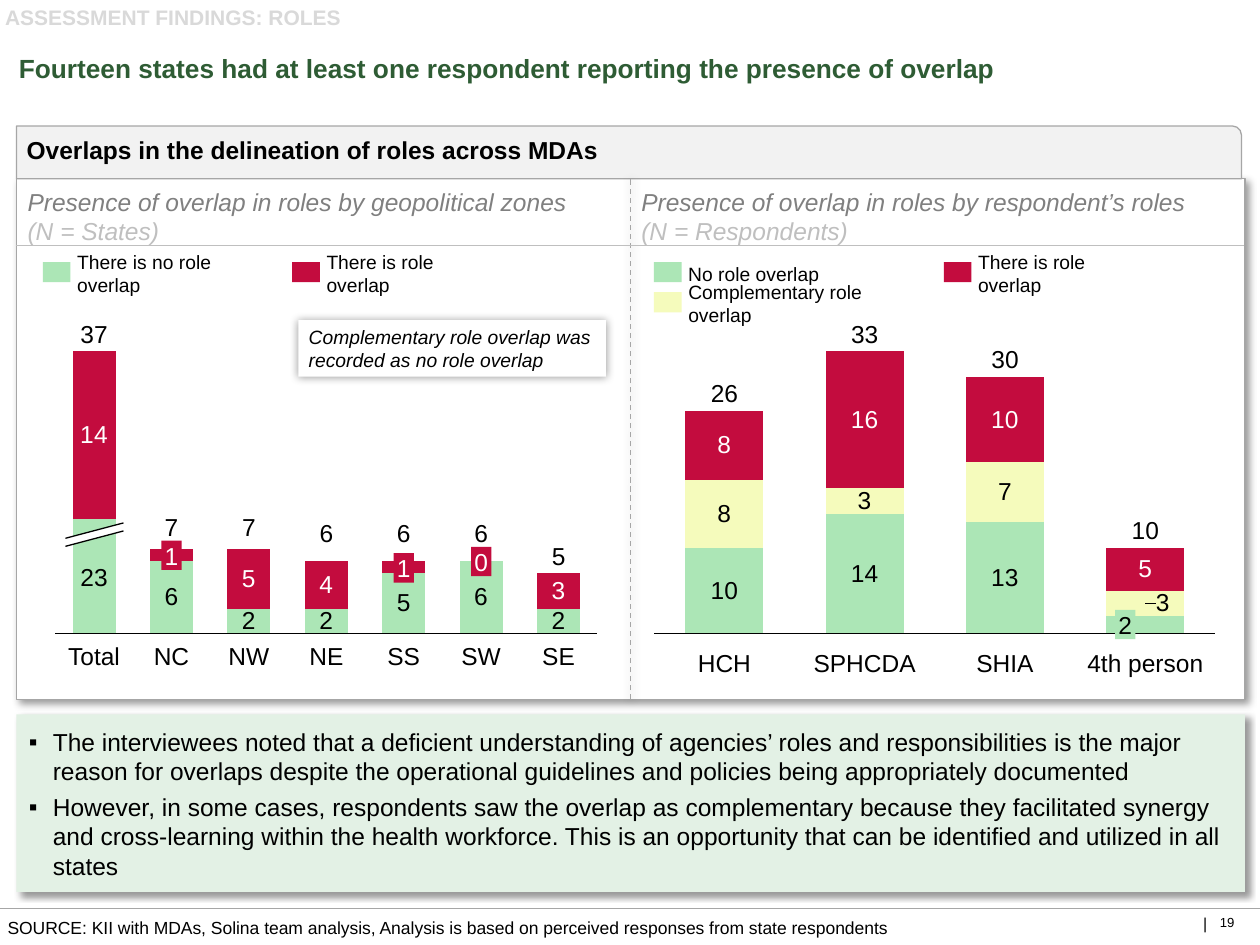
from lxml.etree import SubElement
from pptx import Presentation
from pptx.chart.data import CategoryChartData
from pptx.dml.color import RGBColor
from pptx.enum.chart import (XL_CHART_TYPE, XL_LABEL_POSITION, XL_TICK_LABEL_POSITION as TICK_LABEL,
                             XL_TICK_MARK)
from pptx.enum.dml import MSO_LINE
from pptx.enum.shapes import MSO_CONNECTOR, MSO_SHAPE
from pptx.enum.text import MSO_ANCHOR as ANCHOR, PP_ALIGN as ALIGN
from pptx.oxml import parse_xml
from pptx.oxml.ns import nsdecls, qn
from pptx.util import Pt

BLACK = RGBColor(0x00, 0x00, 0x00)
WHITE = RGBColor(0xFF, 0xFF, 0xFF)
TITLE_GREEN = RGBColor(0x2E, 0x5C, 0x34)
PALE_GREEN = RGBColor(0xE3, 0xF1, 0xE5)
GREEN = RGBColor(0xAC, 0xE6, 0xB6)
YELLOW = RGBColor(0xF5, 0xFB, 0xBC)
RED = RGBColor(0xC3, 0x0C, 0x3E)
DARK_GRAY = RGBColor(0x80, 0x80, 0x80)
GRAY = RGBColor(0xA6, 0xA6, 0xA6)
LIGHT_GRAY = RGBColor(0xBF, 0xBF, 0xBF)
TAG_GRAY = RGBColor(0xD9, 0xD9, 0xD9)
HEADER_GRAY = RGBColor(0xF2, 0xF2, 0xF2)

CHART_TOP, CHART_HEIGHT = 194.4, 174.2
CARD_SHADOW, GLOW = (4, 3, 45), (5, 0, 0)  # blur, distance, angle


class SlideBuilder:
    font_name = "Arial"
    label_size = 14

    def __init__(self, slide):
        self.slide = slide

    def add_run(self, paragraph, text, size, color=BLACK, bold=False, italic=False):
        run = paragraph.add_run()
        run.text = text
        font = run.font
        font.name, font.size, font.bold, font.italic = self.font_name, Pt(size), bold, italic
        font.color.rgb = color

    def format_frame(self, shape, anchor=ANCHOR.TOP, insets=(0, 0, 0, 0), wrap=True):
        frame = shape.text_frame
        frame.word_wrap, frame.vertical_anchor = wrap, anchor
        (frame.margin_left, frame.margin_top,
         frame.margin_right, frame.margin_bottom) = map(Pt, insets)
        return frame

    def set_text(self, shape, text, size, color=BLACK, bold=False, italic=False,
                 align=ALIGN.LEFT, **frame_style):
        paragraph = self.format_frame(shape, **frame_style).paragraphs[0]
        paragraph.alignment = align
        self.add_run(paragraph, text, size, color, bold, italic)
        return paragraph

    def title(self, box, text):
        title = self.slide.shapes.title
        title.left, title.top, title.width, title.height = map(Pt, box)
        paragraph = self.set_text(title, text, 15, TITLE_GREEN, bold=True,
                                  anchor=ANCHOR.MIDDLE, insets=(5, 3, 5, 3))
        paragraph.line_spacing = 0.9

    def text(self, box, text, size, color=BLACK, **style):
        shape = self.slide.shapes.add_textbox(*map(Pt, box))
        return self.set_text(shape, text, size, color, **style)

    def shadow(self, properties, shadow):
        effects = properties.find(qn("a:effectLst"))
        if effects is None:
            effects = SubElement(properties, qn("a:effectLst"))
        if shadow:
            blur, distance, angle = shadow
            effects.append(parse_xml(
                f'<a:outerShdw {nsdecls("a")} blurRad="{Pt(blur)}" dist="{Pt(distance)}" '
                f'dir="{angle * 60000}" algn="ctr" rotWithShape="0"><a:srgbClr val="000000">'
                '<a:alpha val="40000"/></a:srgbClr></a:outerShdw>'))

    def box(self, box, fill, line=None, shadow=None, kind=MSO_SHAPE.RECTANGLE):
        shape = self.slide.shapes.add_shape(kind, *map(Pt, box))
        self.paint(shape, fill, line)
        self.shadow(shape._element.spPr, shadow)
        return shape

    def paint(self, shape, fill, line=None):
        shape.fill.solid()
        shape.fill.fore_color.rgb = fill
        if line:
            shape.line.color.rgb, shape.line.width = line, Pt(0.75)
        else:
            shape.line.fill.background()
        shape.shadow.inherit = False

    def line(self, start, end, color, width=0.75, dash=None, shadow=None):
        connector = self.slide.shapes.add_connector(
            MSO_CONNECTOR.STRAIGHT, *map(Pt, (*start, *end)))
        connector.line.color.rgb, connector.line.width = color, Pt(width)
        if dash:
            connector.line.dash_style = dash
        self.shadow(connector._element.spPr, shadow)
        return connector

    def polygon(self, points, fill):
        corners = [(Pt(x), Pt(y)) for x, y in points]
        outline = self.slide.shapes.build_freeform(*corners[0])
        outline.add_line_segments(corners[1:], close=True)
        self.paint(outline.convert_to_shape(), fill)

    def bullets(self, shape, items):
        frame = self.format_frame(shape, insets=(7.2, 7.2, 0, 5.8))
        for index, item in enumerate(items):
            paragraph = frame.add_paragraph() if index else frame.paragraphs[0]
            paragraph.alignment = ALIGN.LEFT
            paragraph.space_before, paragraph.space_after = Pt(1.5 if index else 0), Pt(2)
            properties = paragraph._p.get_or_add_pPr()
            properties.set("marL", str(Pt(13.7)))
            properties.set("indent", str(Pt(-13.7)))
            SubElement(properties, qn("a:buFont")).set("typeface", self.font_name)
            SubElement(properties, qn("a:buChar")).set("char", "▪")
            self.add_run(paragraph, item, 14)

    def center_label(self, center, top, text, width=None, color=BLACK, fill=None,
                     anchor=ANCHOR.BOTTOM):
        width = width or 3.8 + 7.8 * len(text)
        box = (center - width / 2, top, width, 16.8)
        style = dict(align=ALIGN.CENTER, anchor=anchor, wrap=False)
        if fill:
            self.set_text(self.box(box, fill), text, self.label_size, color, **style)
        else:
            self.text(box, text, self.label_size, color, **style)

    def legend(self, left, top, text, width, color):
        self.box((left, top, 15.8, 11.5), color)
        self.text((left + 19.6, top, width, 13), text, 11, anchor=ANCHOR.MIDDLE, wrap=False)

    def stacked_chart(self, left, width, count, maximum, series_rows):
        """Each row is (values, fill, label color, labelled points). Returns chart and centers."""
        data = CategoryChartData()
        data.categories = [str(number + 1) for number in range(count)]
        for number, (values, *_) in enumerate(series_rows, 1):
            data.add_series(f"Series {number}", values)
        chart = self.slide.shapes.add_chart(
            XL_CHART_TYPE.COLUMN_STACKED, *map(Pt, (left, CHART_TOP, width, CHART_HEIGHT)),
            data).chart
        chart.has_legend = chart.has_title = False
        chart.font.name, chart.font.size = self.font_name, Pt(10)
        chart.font.color.rgb = BLACK
        category_axis, value_axis = chart.category_axis, chart.value_axis
        category_axis.tick_label_position = TICK_LABEL.NONE
        category_axis.major_tick_mark = XL_TICK_MARK.NONE
        category_axis.format.line.color.rgb = BLACK
        category_axis.format.line.width = Pt(0.75)
        value_axis.visible = value_axis.has_major_gridlines = False
        value_axis.minimum_scale, value_axis.maximum_scale = 0, maximum
        plot = chart.plots[0]
        plot.gap_width, plot.overlap, plot.vary_by_categories = 80, 100, False
        for series, (_, fill, label_color, labelled) in zip(plot.series, series_rows):
            series.format.fill.solid()
            series.format.fill.fore_color.rgb = fill
            series.data_labels.show_value = False
            for index in labelled:
                label = series.points[index].data_label
                label.font.name, label.font.size = self.font_name, Pt(self.label_size)
                label.font.color.rgb = label_color
                label.position = XL_LABEL_POSITION.CENTER
        area = chart._chartSpace.chart.plotArea
        for layout in area.findall(qn("c:layout")):
            area.remove(layout)
        area.insert(0, parse_xml(
            f'<c:layout {nsdecls("c")}><c:manualLayout><c:layoutTarget val="inner"/>'
            '<c:xMode val="edge"/><c:yMode val="edge"/><c:x val="0.02"/><c:y val="0.037"/>'
            '<c:w val="0.96"/><c:h val="0.925"/></c:manualLayout></c:layout>'))
        step = 0.96 * width / count
        return chart, [left + 0.02 * width + (index + 0.5) * step for index in range(count)]

    def column_labels(self, centers, names, name_top, totals):
        for center, (name, width), (total, top) in zip(centers, names, totals):
            self.center_label(center, name_top, name, width, anchor=ANCHOR.TOP)
            self.center_label(center, top, total)


def shift_label(series, index, offset):
    """Move one data label sideways by a share of the chart width."""
    label = next(item for item in series._element.iter(qn("c:dLbl"))
                 if item.find(qn("c:idx")).get("val") == str(index))
    label.insert(1, parse_xml(f'<c:layout {nsdecls("c")}><c:manualLayout><c:x val="{offset}"/>'
                              '<c:y val="0"/></c:manualLayout></c:layout>'))


def main():
    presentation = Presentation()
    presentation.slide_width, presentation.slide_height = Pt(720), Pt(540)
    builder = SlideBuilder(presentation.slides.add_slide(presentation.slide_layouts[5]))

    builder.title((5.8, 18, 714.2, 44),
                  "Fourteen states had at least one respondent reporting the presence of overlap")
    builder.text((-2.9, 2.9, 697, 14.4), "ASSESSMENT FINDINGS: ROLES", 12, TAG_GRAY,
                 bold=True, insets=(5.8, 0, 0, 0))
    builder.bullets(builder.box((9.4, 408.2, 702, 101.5), PALE_GREEN, shadow=CARD_SHADOW), [
        "The interviewees noted that a deficient understanding of agencies’ roles and responsibilities is the major reason for overlaps despite the operational guidelines and policies being appropriately documented",
        "However, in some cases, respondents saw the overlap as complementary because they facilitated synergy and cross-learning within the health workforce. This is an opportunity that can be identified and utilized in all states"])

    panel = builder.box((9.4, 102.2, 702, 297.4), WHITE, GRAY, CARD_SHADOW)
    header = builder.box((9.4, 72, 700, 30.2), HEADER_GRAY, GRAY,
                         kind=MSO_SHAPE.ROUND_1_RECTANGLE)
    builder.set_text(header, "Overlaps in the delineation of roles across MDAs", 14, bold=True,
                     anchor=ANCHOR.MIDDLE, insets=(5.8, 0, 2.9, 2.9))
    divider = builder.line((360, 399.6), (360, 102.2), GRAY, dash=MSO_LINE.DASH, shadow=GLOW)
    divider.begin_connect(panel, 2)
    divider.end_connect(panel, 0)
    for left, subject, unit in ((15.8, "geopolitical zones", "States"),
                                (366.5, "respondent’s roles", "Respondents")):
        paragraph = builder.text((left, 106.6, 319, 33.8),
                                 f"Presence of overlap in roles by {subject} ", 14, DARK_GRAY,
                                 italic=True)
        builder.add_run(paragraph, f"(N = {unit})", 14, LIGHT_GRAY, italic=True)

    # The Total column is shortened by an axis break, so its lower value is below 23
    _, centers = builder.stacked_chart(25.2, 322.6, 7, 23.54, [
        ([9.54, 6, 2, 2, 5, 6, 2], GREEN, BLACK, range(1, 7)),
        ([14, 1, 5, 4, 1, 0, 3], RED, WHITE, (0, 2, 3, 6))])
    break_left, break_right = 37.4, 70.6
    upper = [(break_left, 307.6), (break_right, 298.8)]
    lower = [(break_left, 312.2), (break_right, 303.4)]
    builder.polygon(upper + lower[::-1], WHITE)
    for edge in (upper, lower):
        builder.line(*edge, BLACK)
    builder.column_labels(
        centers,
        [("Total", 31.7), ("NC", 21.6), ("NW", 24.5), ("NE", 20.2), ("SS", 19.4), ("SW", 23.8),
         ("SE", 19.4)], 366.5,
        [("37", 182), ("7", 292.3), ("7", 292.3), ("6", 296), ("6", 296), ("6", 296),
         ("5", 309)])
    builder.center_label(centers[0], 321.1, "23", anchor=ANCHOR.MIDDLE)
    for column, top, value in ((1, 308.9, "1"), (4, 316.1, "1"), (5, 312.5, "0")):
        builder.center_label(centers[column], top, value, color=WHITE, fill=RED,
                             anchor=ANCHOR.MIDDLE)
    builder.legend(24.5, 149.8, "There is no role overlap", 115.2, GREEN)
    builder.legend(167, 149.8, "There is role overlap", 100, RED)

    chart, centers = builder.stacked_chart(367.2, 334.1, 4, 33, [
        ([10, 14, 13, 2], GREEN, BLACK, range(3)),
        ([8, 3, 7, 3], YELLOW, BLACK, range(4)),
        ([8, 16, 10, 5], RED, WHITE, range(4))])
    shift_label(chart.plots[0].series[1], 3, 0.03)
    builder.column_labels(
        centers, [("HCH", 31.7), ("SPHCDA", 59.8), ("SHIA", 33.8), ("4th person", 67)], 370.1,
        [("26", 216), ("33", 182), ("30", 196.6), ("10", 294.5)])
    builder.center_label(centers[3] - 11.5, 348.5, "2", fill=GREEN, anchor=ANCHOR.MIDDLE)
    builder.legend(373.7, 149.8, "No role overlap", 74.9, GREEN)
    builder.legend(373.7, 167, "Complementary role overlap", 138.2, YELLOW)
    builder.legend(539.3, 149.8, "There is role overlap", 100, RED)

    builder.line((0, 519.1), (720, 519.1), GRAY, 1)
    builder.line((9, 140.4), (711, 140.4), LIGHT_GRAY)
    builder.text((4.3, 524.2, 536.4, 12.2), "SOURCE: KII with MDAs, Solina team analysis, Analysis is based on perceived responses from state respondents", 10)
    note = builder.box((170.6, 182.9, 175.7, 32.4), WHITE, shadow=GLOW)
    builder.set_text(note, "Complementary role overlap was recorded as no role overlap", 11,
                     italic=True, insets=(5.8, 2.9, 5.8, 2.9))
    builder.text((687.6, 522, 2.2, 10.8), "|", 9, align=ALIGN.RIGHT, anchor=ANCHOR.MIDDLE,
                 wrap=False)
    builder.text((697, 522.7, 15.1, 12.2), "19", 7.5, wrap=False)

    presentation.save("out.pptx")


if __name__ == "__main__":
    main()
